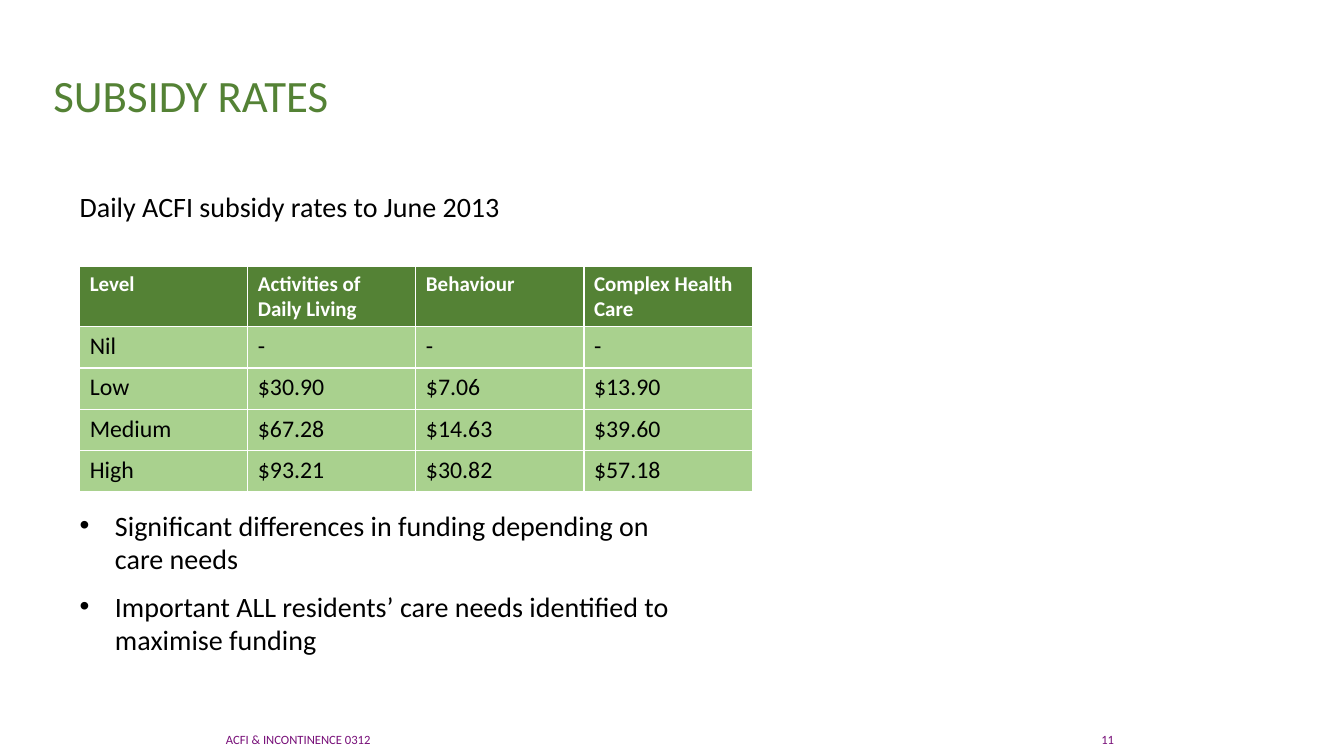
from dataclasses import dataclass

import pptx
import pptx.dml.color
import pptx.enum.text
import pptx.oxml
import pptx.oxml.ns
import pptx.util
from pptx.util import Inches


@dataclass(frozen=True)
class Theme:
    font: str = "Calibri"
    green: str = "548235"
    light_green: str = "A9D18E"
    purple: str = "770E78"
    black: str = "000000"
    white: str = "FFFFFF"
    title_size: int = 32
    body_size: int = 20
    cell_size: int = 17
    header_size: int = 15
    footer_size: int = 9
    paragraph_gap: int = 10
    border_width: int = 1


THEME = Theme()
ALIGN = pptx.enum.text.PP_ALIGN
ANCHOR = pptx.enum.text.MSO_ANCHOR

RATES = [
    ["Level", "Activities of Daily Living", "Behaviour", "Complex Health Care"],
    ["Nil", "-", "-", "-"],
    ["Low", "$30.90", "$7.06", "$13.90"],
    ["Medium", "$67.28", "$14.63", "$39.60"],
    ["High", "$93.21", "$30.82", "$57.18"],
]
FINDINGS = [
    "Significant differences in funding depending on care needs",
    "Important ALL residents’ care needs identified to maximise funding",
]


def rgb(code):
    return pptx.dml.color.RGBColor.from_string(code)


def style(para, size, color, bold=False):
    para.font.name = THEME.font
    para.font.size = pptx.util.Pt(size)
    para.font.color.rgb = rgb(color)
    para.font.bold = bold


def set_margins(frame, left=0, top=0, right=0, bottom=0):
    frame.margin_left, frame.margin_top = Inches(left), Inches(top)
    frame.margin_right, frame.margin_bottom = Inches(right), Inches(bottom)


def add_bullet(para, indent):
    properties = para._p.get_or_add_pPr()
    properties.set("marL", str(Inches(indent)))
    properties.set("indent", str(-Inches(indent)))
    namespace = pptx.oxml.ns.nsdecls("a")
    properties.append(pptx.oxml.parse_xml(f'<a:buFont {namespace} typeface="Arial"/>'))
    properties.append(pptx.oxml.parse_xml(f'<a:buChar {namespace} char="•"/>'))


def add_title(page, text):
    title = page.shapes.title
    title.left, title.top = Inches(0.43), Inches(0.67)
    title.width, title.height = Inches(4.18), Inches(1.04)
    frame = title.text_frame
    frame.text = text
    frame.vertical_anchor = ANCHOR.TOP
    set_margins(frame, left=0.1, right=0.1, bottom=0.05)
    para = frame.paragraphs[0]
    para.alignment = ALIGN.LEFT
    style(para, THEME.title_size, THEME.green)


def add_text(page, place, lines, size, color, align=ALIGN.LEFT, gap=0, bullet_indent=0):
    box = page.shapes.add_textbox(*map(Inches, place))
    frame = box.text_frame
    frame.word_wrap = True
    set_margins(frame)
    frame.text = "\n".join(lines)
    for para in frame.paragraphs:
        para.alignment = align
        para.space_after = pptx.util.Pt(gap)
        if bullet_indent:
            add_bullet(para, bullet_indent)
        style(para, size, color)


def add_borders(cell):
    width = pptx.util.Pt(THEME.border_width)
    for side in ("lnL", "lnR", "lnT", "lnB"):
        cell._tc.get_or_add_tcPr().append(pptx.oxml.parse_xml(
            f'<a:{side} {pptx.oxml.ns.nsdecls("a")} w="{width}"><a:solidFill>'
            f'<a:srgbClr val="{THEME.white}"/></a:solidFill></a:{side}>'))


def fill_cell(cell, text, is_header):
    add_borders(cell)
    cell.fill.solid()
    cell.fill.fore_color.rgb = rgb(THEME.green if is_header else THEME.light_green)
    cell.text = text
    para = cell.text_frame.paragraphs[0]
    if is_header:
        style(para, THEME.header_size, THEME.white, bold=True)
    else:
        style(para, THEME.cell_size, THEME.black)


def add_rates_table(page, rows):
    header_height, row_height = Inches(0.59), Inches(0.41)
    table_height = header_height + row_height * (len(rows) - 1)
    table = page.shapes.add_table(
        len(rows), len(rows[0]), Inches(0.79), Inches(2.64), Inches(6.67), table_height
    ).table
    for row_number, values in enumerate(rows):
        is_header = row_number == 0
        table.rows[row_number].height = header_height if is_header else row_height
        for column_number, value in enumerate(values):
            fill_cell(table.cell(row_number, column_number), value, is_header)


def main():
    deck = pptx.Presentation()
    deck.slide_width, deck.slide_height = Inches(13.33), Inches(7.5)
    page = deck.slides.add_slide(deck.slide_layouts.get_by_name("Title Only"))

    add_title(page, "SUBSIDY RATES")
    add_text(page, (2.24, 7.26, 3.42, 0.15), ["ACFI & INCONTINENCE 0312"],
             THEME.footer_size, THEME.purple)
    add_text(page, (7.63, 7.26, 3.42, 0.15), ["11"],
             THEME.footer_size, THEME.purple, align=ALIGN.RIGHT)
    add_rates_table(page, RATES)
    add_text(page, (0.79, 5.04, 5.95, 2.39), FINDINGS, THEME.body_size, THEME.black,
             gap=THEME.paragraph_gap, bullet_indent=0.35)
    add_text(page, (0.79, 1.88, 5.95, 2.39), ["Daily ACFI subsidy rates to June 2013"],
             THEME.body_size, THEME.black, gap=THEME.paragraph_gap)
    deck.save("out.pptx")


if __name__ == "__main__":
    main()
